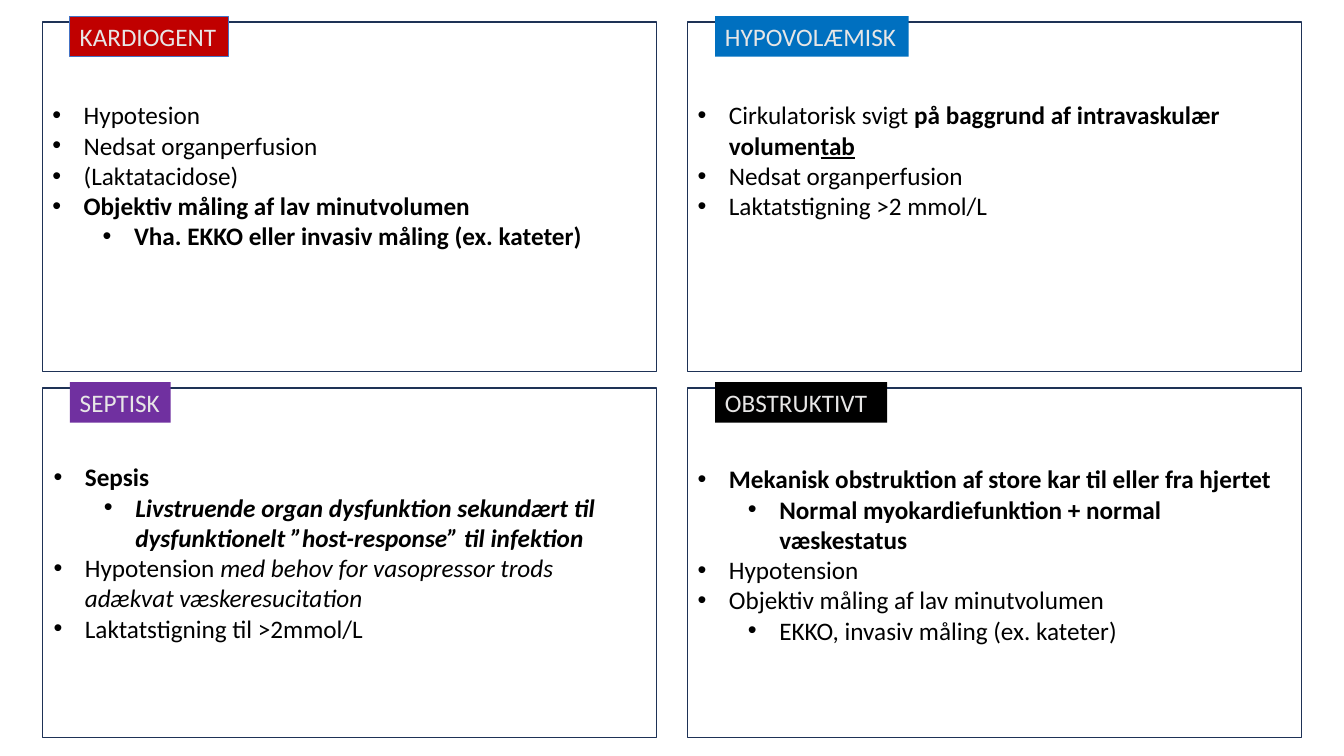
from dataclasses import dataclass

from lxml import etree
from pptx import Presentation
from pptx.dml.color import RGBColor
from pptx.enum.shapes import MSO_SHAPE
from pptx.enum.text import MSO_ANCHOR, PP_ALIGN
from pptx.oxml.ns import qn
from pptx.util import Cm, Pt

RECT = MSO_SHAPE.RECTANGLE
TOP = MSO_ANCHOR.TOP
LEFT = PP_ALIGN.LEFT


@dataclass(frozen=True)
class Theme:
    font: str = "Calibri"
    size: int = 18
    ink: str = "000000"
    pale: str = "E7E6E6"
    frame: str = "1E3256"
    edge: str = "4472C4"
    red: str = "C00000"
    blue: str = "0070C0"
    purple: str = "7030A0"
    black: str = "000000"


@dataclass(frozen=True)
class Run:
    text: str
    style: str = ""  # any of b, i, u


@dataclass(frozen=True)
class Item:
    runs: tuple[Run, ...]
    level: int = 0


@dataclass(frozen=True)
class Panel:
    title: str
    fill: str
    width: float  # tag width
    drop: float  # frame top to list top
    lines: int
    items: tuple[Item, ...]
    edge: str = ""
    shift: float = 0


THEME = Theme()

# Grid of panels, in centimetres
X, Y = 1.07, 0.56
STEP_X, STEP_Y = 16.26, 9.22
WIDE, HIGH = 15.47, 8.81
TAG_X, TAG_Y, TAG_H = 0.69, -0.15, 1.02
LINE, PAD = 0.77, 0.25
HANG, NEST = 0.79, 1.27


def item(text: str, style: str = "", level: int = 0) -> Item:
    return Item((Run(text, style),), level)


PANELS = (
    Panel("KARDIOGENT", THEME.red, 3.99, 1.83, 5, (
        item("Hypotesion"),
        item("Nedsat organperfusion"),
        item("(Laktatacidose)"),
        item("Objektiv måling af lav minutvolumen", "b"),
        item("Vha. EKKO eller invasiv måling (ex. kateter)", "b", 1),
    ), edge=THEME.edge),
    Panel("HYPOVOLÆMISK", THEME.blue, 4.88, 1.83, 4, (
        Item((Run("Cirkulatorisk svigt "),
              Run("på baggrund af intravaskulær volumen", "b"),
              Run("tab", "bu"))),
        item("Nedsat organperfusion"),
        item("Laktatstigning >2 mmol/L"),
    )),
    Panel("SEPTISK", THEME.purple, 2.54, 1.73, 6, (
        item("Sepsis", "b"),
        item("Livstruende organ dysfunktion sekundært til dysfunktionelt "
             "”host-response” til infektion", "bi", 1),
        Item((Run("Hypotension "),
              Run("med behov for vasopressor trods adækvat "
                  "væskeresucitation", "i"))),
        item("Laktatstigning til >2mmol/L"),
    ), shift=0.03),
    Panel("OBSTRUKTIVT", THEME.black, 4.34, 1.78, 7, (
        item("Mekanisk obstruktion af store kar til eller fra hjertet", "b"),
        item("Normal myokardiefunktion + normal væskestatus", "b", 1),
        item("Hypotension"),
        item("Objektiv måling af lav minutvolumen"),
        item("EKKO, invasiv måling (ex. kateter)", level=1),
    )),
)


def add_run(para, run: Run, color: str) -> None:
    part = para.add_run()
    part.text = run.text
    font = part.font
    font.name, font.size = THEME.font, Pt(THEME.size)
    font.color.rgb = RGBColor.from_string(color)
    font.bold = "b" in run.style
    font.italic = "i" in run.style
    font.underline = "u" in run.style


def add_rect(slide, x: float, y: float, w: float, h: float,
             fill: str = "", line: str = "", weight: float = 1):
    box = slide.shapes.add_shape(RECT, Cm(x), Cm(y), Cm(w), Cm(h))
    box.shadow.inherit = False
    if fill:
        box.fill.solid()
        box.fill.fore_color.rgb = RGBColor.from_string(fill)
    else:
        box.fill.background()
    if line:
        box.line.color.rgb = RGBColor.from_string(line)
        box.line.width = Pt(weight)
    else:
        box.line.fill.background()
    return box


def add_tag(slide, panel: Panel, x: float, y: float) -> None:
    tag = add_rect(slide, x + TAG_X, y + TAG_Y, panel.width, TAG_H,
                   panel.fill, panel.edge, 0.75)
    frame = tag.text_frame
    frame.word_wrap = True
    frame.vertical_anchor = TOP
    frame.margin_right = 0
    para = frame.paragraphs[0]
    para.alignment = LEFT
    add_run(para, Run(panel.title), THEME.pale)


def add_list(slide, panel: Panel, x: float, y: float) -> None:
    box = slide.shapes.add_textbox(
        Cm(x + panel.shift), Cm(y + panel.drop),
        Cm(WIDE), Cm(panel.lines * LINE + PAD))
    frame = box.text_frame
    frame.word_wrap = True
    for i, entry in enumerate(panel.items):
        para = frame.add_paragraph() if i else frame.paragraphs[0]
        para.level = entry.level
        # Bullet with hanging indent
        props = para._p.get_or_add_pPr()
        props.set("marL", str(Cm(HANG + NEST * entry.level)))
        props.set("indent", str(-Cm(HANG)))
        etree.SubElement(props, qn("a:buFont")).set("typeface", "Arial")
        etree.SubElement(props, qn("a:buChar")).set("char", "•")
        for run in entry.runs:
            add_run(para, run, THEME.ink)


def main() -> None:
    deck = Presentation()
    deck.slide_width, deck.slide_height = Cm(33.87), Cm(19.05)
    slide = deck.slides.add_slide(deck.slide_layouts[6])
    # Two rows of two panels
    for i, panel in enumerate(PANELS):
        row, col = divmod(i, 2)
        x, y = X + col * STEP_X, Y + row * STEP_Y
        add_rect(slide, x, y, WIDE, HIGH, line=THEME.frame)
        add_tag(slide, panel, x, y)
        add_list(slide, panel, x, y)
    deck.save("out.pptx")


if __name__ == "__main__":
    main()
